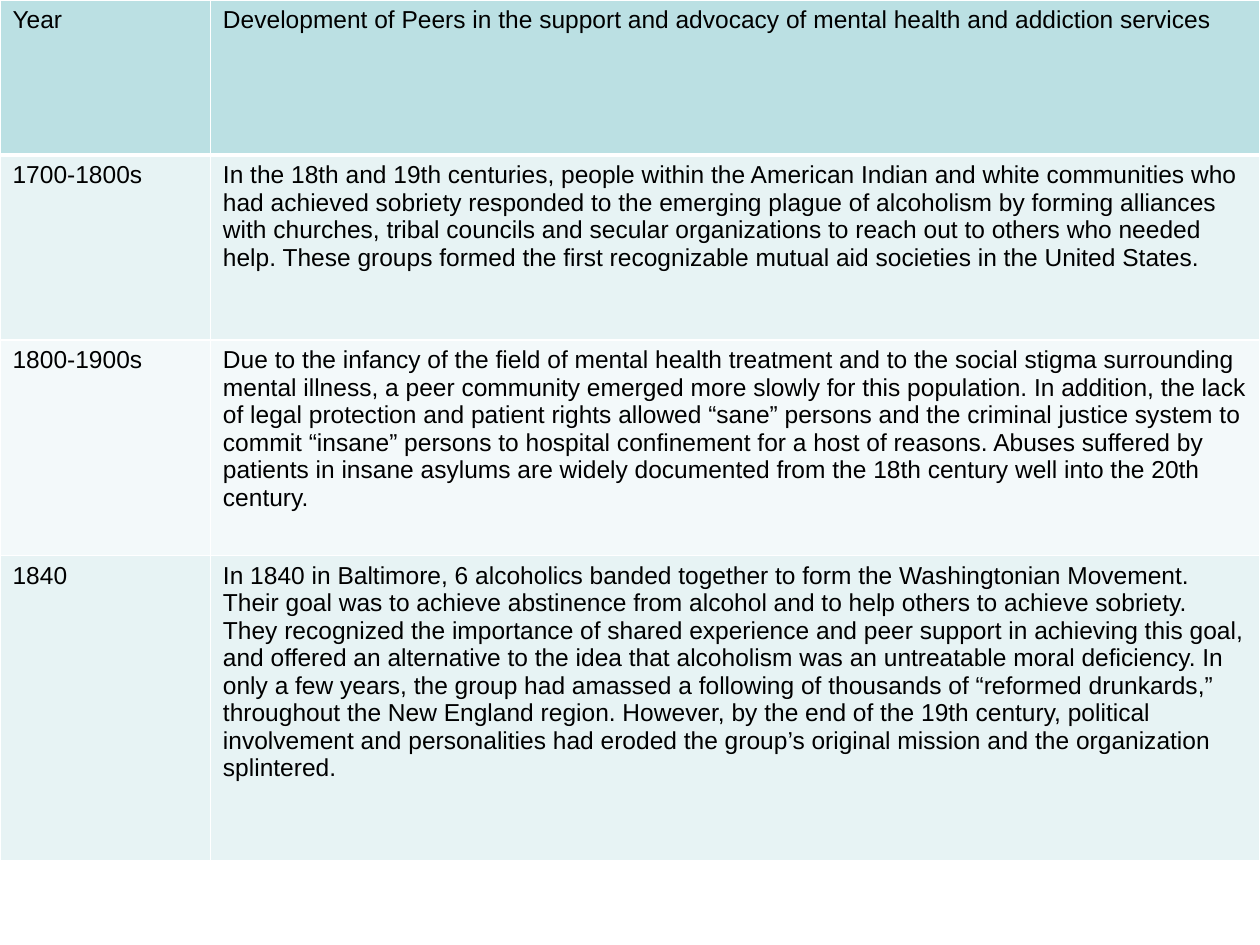
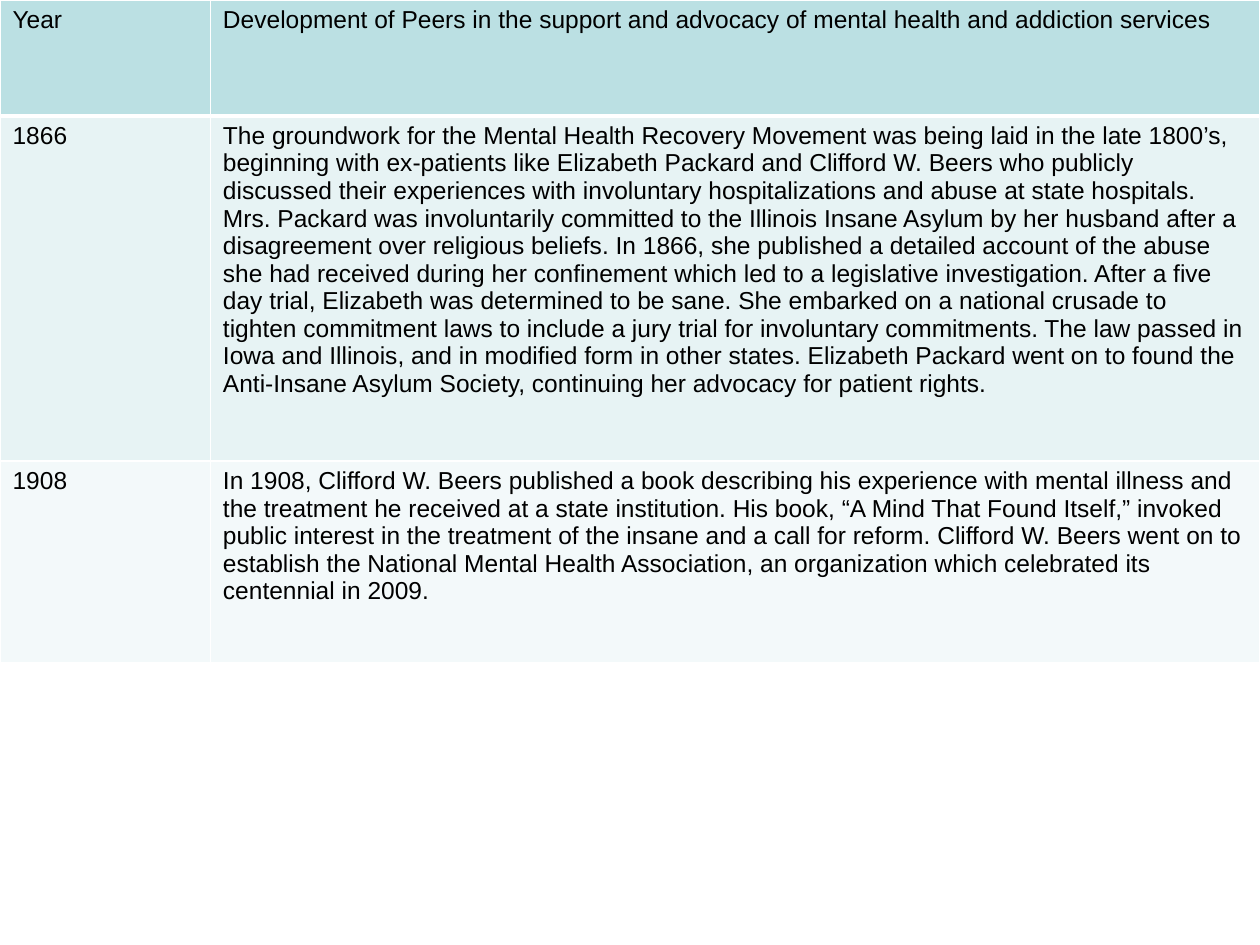
from typing import NamedTuple

from lxml.etree import SubElement
from pptx import Presentation
from pptx.dml.color import RGBColor
from pptx.oxml.ns import qn
from pptx.util import Inches, Pt

BLACK = RGBColor(0x00, 0x00, 0x00)
WHITE = RGBColor(0xFF, 0xFF, 0xFF)
TEAL = RGBColor(0xBB, 0xE0, 0xE3)
BANDS = (RGBColor(0xE7, 0xF3, 0xF4), RGBColor(0xF3, 0xF9, 0xFA))
COLS = (1.67, 8.33)
FONT = {"name": "Arial", "size": Pt(14), "bold": False}
SIDES = ("lnL", "lnR", "lnT", "lnB")


class Entry(NamedTuple):
    year: str
    story: str
    height: float


def head(height: float) -> Entry:
    return Entry(
        "Year",
        "Development of Peers in the support and advocacy of mental health "
        "and addiction services",
        height,
    )


EARLY = [
    head(1.23),
    Entry(
        "1700-1800s",
        "In the 18th and 19th centuries, people within the American Indian and "
        "white communities who had achieved sobriety responded to the emerging "
        "plague of alcoholism by forming alliances with churches, tribal councils "
        "and secular organizations to reach out to others who needed help. These "
        "groups formed the first recognizable mutual aid societies in the United "
        "States.",
        1.47,
    ),
    Entry(
        "1800-1900s",
        "Due to the infancy of the field of mental health treatment and to the "
        "social stigma surrounding mental illness, a peer community emerged more "
        "slowly for this population. In addition, the lack of legal protection and "
        "patient rights allowed “sane” persons and the criminal justice system to "
        "commit “insane” persons to hospital confinement for a host of reasons. "
        "Abuses suffered by patients in insane asylums are widely documented from "
        "the 18th century well into the 20th century.",
        1.71,
    ),
    Entry(
        "1840",
        "In 1840 in Baltimore, 6 alcoholics banded together to form the "
        "Washingtonian Movement.\n"
        "Their goal was to achieve abstinence from alcohol and to help others to "
        "achieve sobriety. They recognized the importance of shared experience and "
        "peer support in achieving this goal, and offered an alternative to the "
        "idea that alcoholism was an untreatable moral deficiency. In only a few "
        "years, the group had amassed a following of thousands of “reformed "
        "drunkards,” throughout the New England region. However, by the end of the "
        "19th century, political involvement and personalities had eroded the "
        "group’s original mission and the organization splintered.",
        2.42,
    ),
]
PACKARD = (
    "The groundwork for the Mental Health Recovery Movement was being laid in "
    "the late 1800’s, beginning with ex‐patients like Elizabeth Packard and "
    "Clifford W. Beers who publicly discussed their experiences with "
    "involuntary hospitalizations and abuse at state hospitals.",
    "Mrs. Packard was involuntarily committed to the Illinois Insane Asylum by "
    "her husband after a disagreement over religious beliefs. In 1866, she "
    "published a detailed account of the abuse she had received during her "
    "confinement which led to a legislative investigation.",
    "After a five day trial, Elizabeth was determined to be sane. She embarked "
    "on a national crusade to tighten commitment laws to include a jury trial "
    "for involuntary commitments. The law passed in Iowa and Illinois, and in "
    "modified form in other states.",
    "Elizabeth Packard went on to found the Anti‐Insane Asylum Society, "
    "continuing her advocacy for patient rights.",
)
LATER = [
    head(0.92),
    Entry("1866", " ".join(PACKARD), 2.74),
    Entry(
        "1908",
        "In 1908, Clifford W. Beers published a book describing his experience "
        "with mental illness and the treatment he received at a state institution. "
        "His book, “A Mind That Found Itself,” invoked public interest in the "
        "treatment of the insane and a call for reform. Clifford W. Beers went on "
        "to establish the National Mental Health Association, an organization "
        "which celebrated its centennial in 2009.",
        1.6,
    ),
]


def edge(cell, base: float) -> None:
    """Draw white borders; base is the width of the bottom one in points."""
    props = cell._tc.get_or_add_tcPr()
    for side in SIDES:
        width = base if side == "lnB" else 1
        line = SubElement(props, qn(f"a:{side}"), w=str(Pt(width)))
        fill = SubElement(line, qn("a:solidFill"))
        SubElement(fill, qn("a:srgbClr"), val=str(WHITE))


def write(cell, text: str, fill: RGBColor, base: float) -> None:
    edge(cell, base)
    cell.fill.solid()
    cell.fill.fore_color.rgb = fill
    cell.text_frame.text = text
    for para in cell.text_frame.paragraphs:
        for run in para.runs:
            for key, value in FONT.items():
                setattr(run.font, key, value)
            run.font.color.rgb = BLACK


def add_slide(deck, entries: list[Entry]) -> None:
    slide = deck.slides.add_slide(deck.slide_layouts[6])
    total = sum(entry.height for entry in entries)
    table = slide.shapes.add_table(
        len(entries), len(COLS), 0, 0, Inches(sum(COLS)), Inches(total)
    ).table
    table.horz_banding = False
    for col, width in zip(table.columns, COLS):
        col.width = Inches(width)
    for i, entry in enumerate(entries):
        table.rows[i].height = Inches(entry.height)
        fill, base = (BANDS[(i - 1) % 2], 1) if i else (TEAL, 3)
        for j, text in enumerate((entry.year, entry.story)):
            write(table.cell(i, j), text, fill, base)


def main() -> None:
    deck = Presentation()
    deck.slide_width, deck.slide_height = Inches(10), Inches(7.5)
    for entries in (EARLY, LATER):
        add_slide(deck, entries)
    deck.save("out.pptx")


if __name__ == "__main__":
    main()
